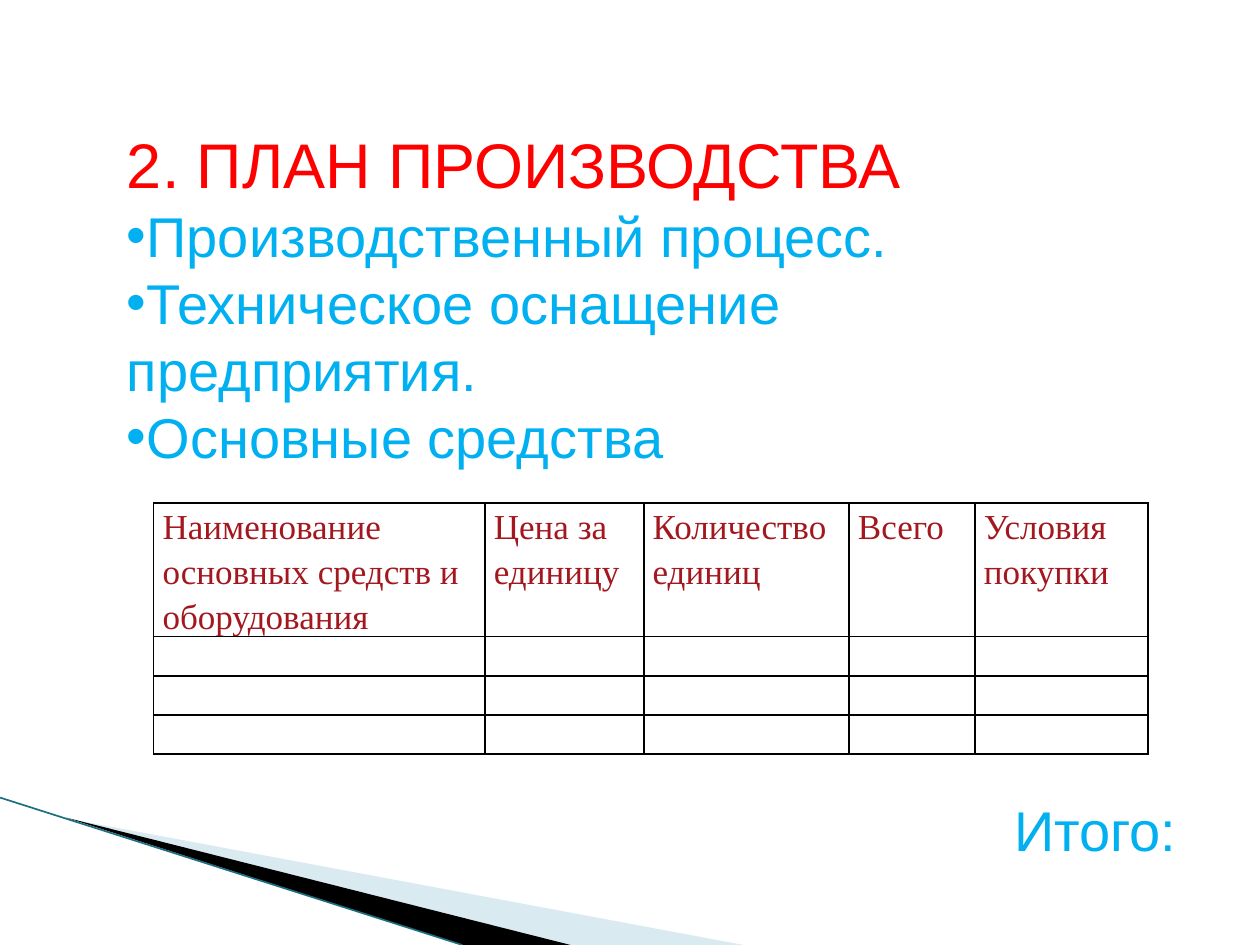
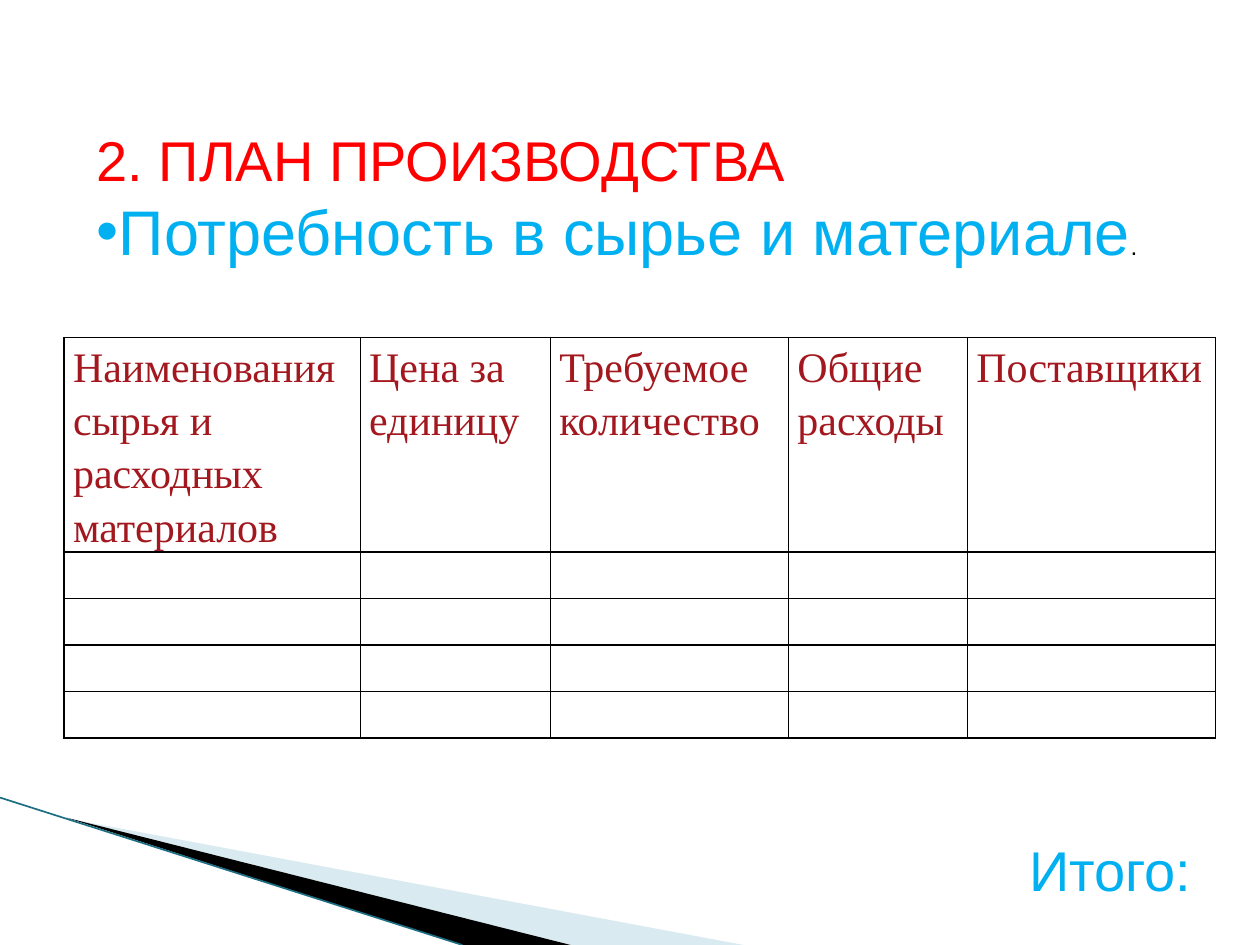
"""Build two production plan slides with headings, blank tables and totals."""
import dataclasses
import itertools

import lxml.etree
import pptx
import pptx.dml.color
import pptx.enum.shapes
import pptx.enum.text
import pptx.oxml.ns
import pptx.util

Inches = pptx.util.Inches
Pt = pptx.util.Pt


@dataclasses.dataclass(frozen=True)
class Theme:
    heading: str = "FF0000"
    accent: str = "00B0F0"
    table_text: str = "A3171E"
    dark: str = "000000"
    pale_band: str = "A0CBDC"
    edge: str = "1C6E82"
    body_font: str = "Arial"
    table_font: str = "Times New Roman"
    large: int = 36
    normal: int = 32
    small: int = 14
    empty_cell: int = 12
    line_ratio: float = 1.197


THEME = Theme()
HEADING = "2. ПЛАН ПРОИЗВОДСТВА"
TOTAL = "Итого:"
TOTAL_SIZE = (1.5, 0.64)
PALE_BAND = [(0.55, 6.5), (5.9, 7.5), (4.52, 7.5)]
DARK_BAND = [(0.53, 6.49), (4.53, 7.5), (3.67, 7.5)]
EDGE = [(0, 6.33), (3.67, 7.5)]

SLIDES = [
    {
        "text_box": (0.91, 0.92, 8.03, 3.0),
        "heading_size": THEME.large,
        "bullet_size": THEME.normal,
        "bullets": ["Производственный процесс.", "Техническое оснащение предприятия.", "Основные средства"],
        "full_stop": "",
        "table_at": (1.22, 3.99),
        "columns": [
            ("Наименование основных средств и оборудования", 2.63),
            ("Цена за единицу", 1.26),
            ("Количество единиц", 1.63),
            ("Всего", 1),
            ("Условия покупки", 1.37),
        ],
        "table_size": 20,
        "header_height": 1.06,
        "row_height": 0.31,
        "empty_rows": 3,
        "total_at": (7.95, 6.27),
    },
    {
        "text_box": (0.67, 0.92, 8.54, 1.48),
        "heading_size": THEME.normal,
        "bullet_size": THEME.large,
        "bullets": ["Потребность в сырье и материале"],
        "full_stop": ".",
        "table_at": (0.51, 2.68),
        "columns": [
            ("Наименования сырья и расходных материалов", 2.35),
            ("Цена за единицу", 1.51),
            ("Требуемое количество", 1.89),
            ("Общие расходы", 1.42),
            ("Поставщики", 1.97),
        ],
        "table_size": 24,
        "header_height": 1.7,
        "row_height": 0.37,
        "empty_rows": 4,
        "total_at": (8.07, 6.58),
    },
]


def rgb(color):
    return pptx.dml.color.RGBColor.from_string(color)


def add_element(parent, tag, **attributes):
    return lxml.etree.SubElement(parent, pptx.oxml.ns.qn(tag), **attributes)


def style_font(font, name, size, color):
    font.name = name
    font.size = Pt(size)
    font.color.rgb = rgb(color)


def style_line(paragraph, size, color):
    paragraph.line_spacing = Pt(round(size * THEME.line_ratio, 1))
    style_font(paragraph.font, THEME.body_font, size, color)


def add_band(slide, points, color, opacity=100):
    corners = [(Inches(x), Inches(y)) for x, y in points]
    builder = slide.shapes.build_freeform(*corners[0])
    builder.add_line_segments(corners[1:], close=True)
    shape = builder.convert_to_shape()
    shape.shadow.inherit = False
    shape.line.fill.background()
    shape.fill.solid()
    shape.fill.fore_color.rgb = rgb(color)
    if opacity < 100:
        color_element = next(shape.element.spPr.iter(pptx.oxml.ns.qn("a:srgbClr")))
        add_element(color_element, "a:alpha", val=str(opacity * 1000))


def add_corner(slide):
    add_band(slide, PALE_BAND, THEME.pale_band, 40)
    add_band(slide, DARK_BAND, THEME.dark)
    ends = [Inches(value) for value in itertools.chain(*EDGE)]
    edge = slide.shapes.add_connector(pptx.enum.shapes.MSO_CONNECTOR.STRAIGHT, *ends)
    edge.line.color.rgb = rgb(THEME.edge)
    edge.line.width = Pt(0.95)
    add_element(edge.element.spPr, "a:effectLst")


def add_text(slide, content):
    box = slide.shapes.add_textbox(*map(Inches, content["text_box"]))
    frame = box.text_frame
    frame.word_wrap = True
    frame.margin_top = Inches(0.08)
    heading = frame.paragraphs[0]
    heading.text = HEADING
    style_line(heading, content["heading_size"], THEME.heading)
    for bullet in content["bullets"]:
        paragraph = frame.add_paragraph()
        paragraph.text = bullet
        properties = paragraph._p.get_or_add_pPr()
        add_element(properties, "a:buFont", typeface=THEME.body_font)
        add_element(properties, "a:buChar", char="•")
        style_line(paragraph, content["bullet_size"], THEME.accent)
    if content["full_stop"]:
        run = paragraph.add_run()
        run.text = content["full_stop"]
        style_font(run.font, THEME.body_font, THEME.small, THEME.dark)


def style_cell(cell, size):
    cell.margin_left = cell.margin_right = Inches(0.07)
    cell.margin_top = cell.margin_bottom = 0
    properties = cell._tc.get_or_add_tcPr()
    for side in ("a:lnL", "a:lnR", "a:lnT", "a:lnB"):
        border = add_element(properties, side, w=str(Pt(1)))
        fill = add_element(border, "a:solidFill")
        add_element(fill, "a:srgbClr", val=THEME.dark)
    cell.fill.background()
    paragraph = cell.text_frame.paragraphs[0]
    style_font(paragraph.font, THEME.table_font, size, THEME.table_text)
    return paragraph


def add_blank_table(slide, content):
    columns = content["columns"]
    heights = [content["header_height"]] + [content["row_height"]] * content["empty_rows"]
    width = sum(column_width for _, column_width in columns)
    place = map(Inches, (*content["table_at"], width, sum(heights)))
    table = slide.shapes.add_table(len(heights), len(columns), *place).table
    table.first_row = table.horz_banding = False
    for row, height in zip(table.rows, heights):
        row.height = Inches(height)
        for cell in row.cells:
            style_cell(cell, THEME.empty_cell)
    for index, (label, column_width) in enumerate(columns):
        table.columns[index].width = Inches(column_width)
        paragraph = table.cell(0, index).text_frame.paragraphs[0]
        paragraph.text = label
        paragraph.line_spacing = 1.15
        paragraph.font.size = Pt(content["table_size"])


def add_total(slide, position):
    box = slide.shapes.add_textbox(*map(Inches, (*position, *TOTAL_SIZE)))
    box.text_frame.word_wrap = False
    paragraph = box.text_frame.paragraphs[0]
    paragraph.text = TOTAL
    style_line(paragraph, THEME.normal, THEME.accent)


def main():
    presentation = pptx.Presentation()
    presentation.slide_width = Inches(10)
    presentation.slide_height = Inches(7.5)
    for content in SLIDES:
        slide = presentation.slides.add_slide(presentation.slide_layouts[6])
        add_corner(slide)
        add_blank_table(slide, content)
        add_text(slide, content)
        add_total(slide, content["total_at"])
    presentation.save("out.pptx")


if __name__ == "__main__":
    main()
